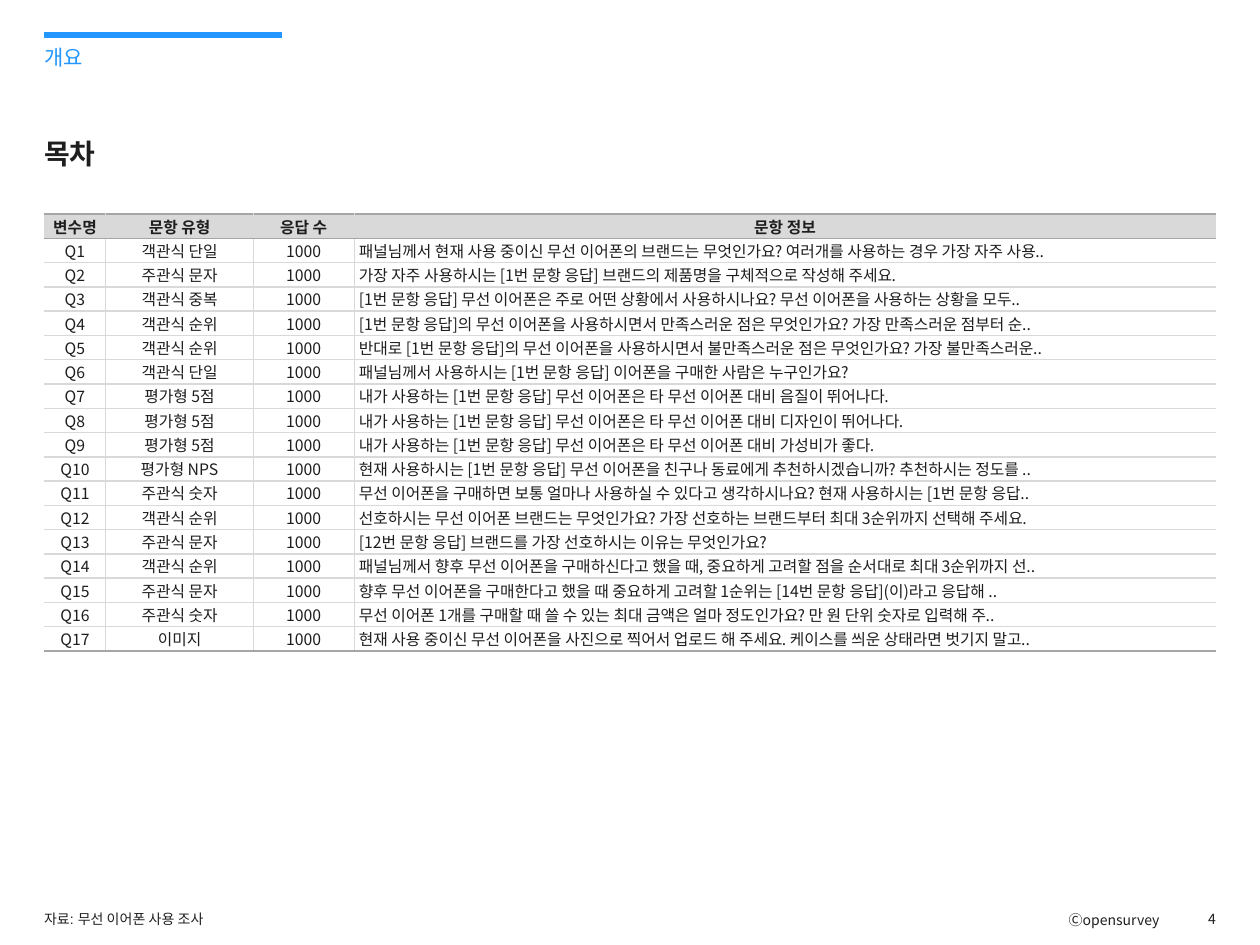
import pptx
import pptx.util
import pptx.dml.color
import pptx.enum.shapes
import pptx.enum.text
import pptx.oxml
import pptx.oxml.ns

Pt = pptx.util.Pt
RGBColor = pptx.dml.color.RGBColor
Align = pptx.enum.text.PP_ALIGN
Anchor = pptx.enum.text.MSO_ANCHOR
qn = pptx.oxml.ns.qn

BLUE = RGBColor(0x23, 0x96, 0xFF)
INK = RGBColor(0x1E, 0x1E, 0x1E)
LIGHT_GRAY = RGBColor(0xD9, 0xD9, 0xD9)
MID_GRAY = RGBColor(0xA6, 0xA6, 0xA6)
FONT = "Noto Sans CJK KR"
RESPONSES = "1000"

HEADERS = ("변수명", "문항 유형", "응답 수", "문항 정보")
QUESTIONS = [
    ("객관식 단일", "패널님께서 현재 사용 중이신 무선 이어폰의 브랜드는 무엇인가요? 여러개를 사용하는 경우 가장 자주 사용.."),
    ("주관식 문자", "가장 자주 사용하시는 [1번 문항 응답] 브랜드의 제품명을 구체적으로 작성해 주세요."),
    ("객관식 중복", "[1번 문항 응답] 무선 이어폰은 주로 어떤 상황에서 사용하시나요? 무선 이어폰을 사용하는 상황을 모두.."),
    ("객관식 순위", "[1번 문항 응답]의 무선 이어폰을 사용하시면서 만족스러운 점은 무엇인가요? 가장 만족스러운 점부터 순.."),
    ("객관식 순위", "반대로 [1번 문항 응답]의 무선 이어폰을 사용하시면서 불만족스러운 점은 무엇인가요? 가장 불만족스러운.."),
    ("객관식 단일", "패널님께서 사용하시는 [1번 문항 응답] 이어폰을 구매한 사람은 누구인가요?"),
    ("평가형 5점", "내가 사용하는 [1번 문항 응답] 무선 이어폰은 타 무선 이어폰 대비 음질이 뛰어나다."),
    ("평가형 5점", "내가 사용하는 [1번 문항 응답] 무선 이어폰은 타 무선 이어폰 대비 디자인이 뛰어나다."),
    ("평가형 5점", "내가 사용하는 [1번 문항 응답] 무선 이어폰은 타 무선 이어폰 대비 가성비가 좋다."),
    ("평가형 NPS", "현재 사용하시는 [1번 문항 응답] 무선 이어폰을 친구나 동료에게 추천하시겠습니까? 추천하시는 정도를 .."),
    ("주관식 숫자", "무선 이어폰을 구매하면 보통 얼마나 사용하실 수 있다고 생각하시나요? 현재 사용하시는 [1번 문항 응답.."),
    ("객관식 순위", "선호하시는 무선 이어폰 브랜드는 무엇인가요? 가장 선호하는 브랜드부터 최대 3순위까지 선택해 주세요."),
    ("주관식 문자", "[12번 문항 응답] 브랜드를 가장 선호하시는 이유는 무엇인가요?"),
    ("객관식 순위", "패널님께서 향후 무선 이어폰을 구매하신다고 했을 때, 중요하게 고려할 점을 순서대로 최대 3순위까지 선.."),
    ("주관식 문자", "향후 무선 이어폰을 구매한다고 했을 때 중요하게 고려할 1순위는 [14번 문항 응답](이)라고 응답해 .."),
    ("주관식 숫자", "무선 이어폰 1개를 구매할 때 쓸 수 있는 최대 금액은 얼마 정도인가요? 만 원 단위 숫자로 입력해 주.."),
    ("이미지", "현재 사용 중이신 무선 이어폰을 사진으로 찍어서 업로드 해 주세요. 케이스를 씌운 상태라면 벗기지 말고.."),
]
TEXTS = [
    ("개요", (25.2, 25.2, 256.3, 14.4), 12, BLUE, FONT, False, Align.LEFT, Anchor.TOP),
    ("Ⓒopensurvey", (610.6, 520.6, 59, 9.4), 8, INK, FONT, False, Align.LEFT, Anchor.TOP),
    ("4", (669.6, 520.6, 25.2, 9.4), 8, INK, FONT, False, Align.RIGHT, Anchor.MIDDLE),
    ("목차", (25.2, 77.8, 669, 19.4), 16, INK, FONT, True, Align.LEFT, Anchor.BOTTOM),
    ("자료: 무선 이어폰 사용 조사", (25.2, 520.6, 532.8, 9.4), 8, INK, "Arial", False, Align.LEFT, Anchor.BOTTOM),
]
LEFT = 25.2
TABLE_TOP = 122.4
COLUMN_WIDTHS = (35.28, 84.24, 57.6, 492.48)
ROW_HEIGHT = 13.88


def style_text(paragraph, size, color, font_name, bold, alignment):
    paragraph.alignment = alignment
    for run in paragraph.runs:
        run.font.size = Pt(size)
        run.font.bold = bold
        run.font.color.rgb = color
        run.font.name = font_name
        east_asian = pptx.oxml.parse_xml(
            f'<a:ea {pptx.oxml.ns.nsdecls("a")} typeface="{FONT}"/>')
        run.font._element.find(qn("a:latin")).addnext(east_asian)


def add_text(slide, text, box, size, color, font_name, bold, alignment, anchor):
    frame = slide.shapes.add_textbox(*map(Pt, box)).text_frame
    frame.text = text
    frame.word_wrap = True
    frame.auto_size = pptx.enum.text.MSO_AUTO_SIZE.SHAPE_TO_FIT_TEXT
    frame.vertical_anchor = anchor
    frame.margin_left = frame.margin_right = frame.margin_top = frame.margin_bottom = 0
    style_text(frame.paragraphs[0], size, color, font_name, bold, alignment)
    return frame.paragraphs[0]


def add_accent_line(slide):
    line = slide.shapes.add_connector(
        pptx.enum.shapes.MSO_CONNECTOR.STRAIGHT, Pt(LEFT), Pt(20), Pt(161.3), Pt(20))
    line.line.color.rgb = BLUE
    line.line.width = Pt(3)
    line._element.spPr.append(
        pptx.oxml.parse_xml(f'<a:effectLst {pptx.oxml.ns.nsdecls("a")}/>'))


def set_borders(cell, borders):
    properties = cell._tc.get_or_add_tcPr()
    for index, side in enumerate(("lnL", "lnR", "lnT", "lnB")):
        color, width = borders[side]
        fill = (f'<a:solidFill><a:srgbClr val="{color}"/></a:solidFill>'
                if color else "<a:noFill/>")
        properties.insert(index, pptx.oxml.parse_xml(
            f'<a:{side} {pptx.oxml.ns.nsdecls("a")} w="{Pt(width)}">{fill}</a:{side}>'))


def add_question_table(slide):
    rows = [HEADERS] + [
        (f"Q{number}", kind, RESPONSES, question)
        for number, (kind, question) in enumerate(QUESTIONS, 1)]
    last_row, last_column = len(rows) - 1, len(HEADERS) - 1
    table = slide.shapes.add_table(
        len(rows), len(HEADERS), Pt(LEFT), Pt(TABLE_TOP),
        Pt(sum(COLUMN_WIDTHS)), Pt(ROW_HEIGHT * len(rows))).table
    for column, width in zip(table.columns, COLUMN_WIDTHS):
        column.width = Pt(width)
    for row_index, values in enumerate(rows):
        table.rows[row_index].height = Pt(ROW_HEIGHT)
        is_header = row_index == 0
        for column_index, value in enumerate(values):
            cell = table.cell(row_index, column_index)
            cell.text = value
            cell.vertical_anchor = Anchor.MIDDLE
            cell.margin_left = cell.margin_right = Pt(2.83)
            cell.margin_top = cell.margin_bottom = 0
            if is_header:
                cell.fill.solid()
                cell.fill.fore_color.rgb = LIGHT_GRAY
            else:
                cell.fill.background()
            centered = is_header or column_index < last_column
            style_text(cell.text_frame.paragraphs[0], 9, INK, FONT, is_header,
                       Align.CENTER if centered else Align.LEFT)
            set_borders(cell, {
                "lnL": (LIGHT_GRAY if column_index > 0 else None, 0.5),
                "lnR": (LIGHT_GRAY if column_index < last_column else None, 0.5),
                "lnT": (MID_GRAY if row_index <= 1 else LIGHT_GRAY, 1),
                "lnB": (MID_GRAY if row_index in (0, last_row) else LIGHT_GRAY, 1),
            })


def main():
    presentation = pptx.Presentation()
    presentation.slide_width = Pt(720)
    presentation.slide_height = Pt(540)
    slide = presentation.slides.add_slide(presentation.slide_layouts[6])
    add_accent_line(slide)
    paragraphs = {text[0]: add_text(slide, *text) for text in TEXTS}
    paragraphs["목차"].line_spacing = 1.1
    add_question_table(slide)
    presentation.save("out.pptx")


if __name__ == "__main__":
    main()
